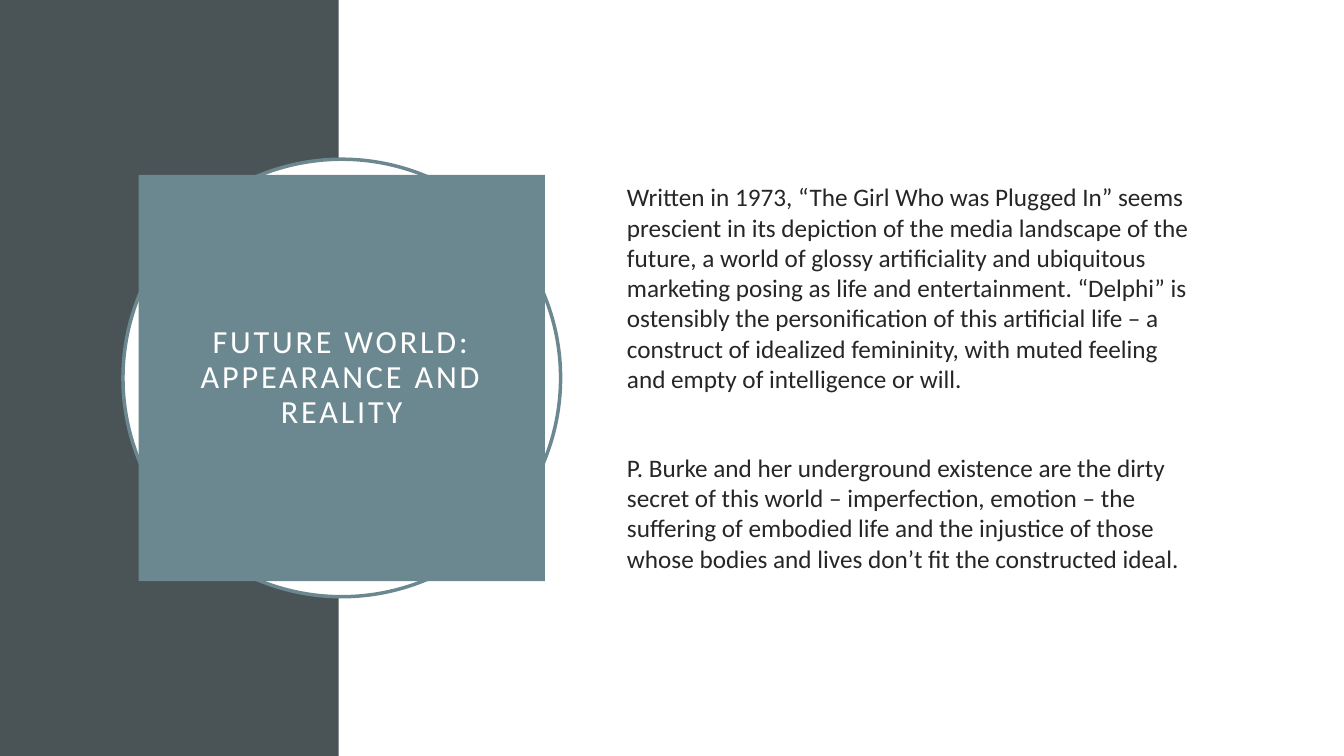
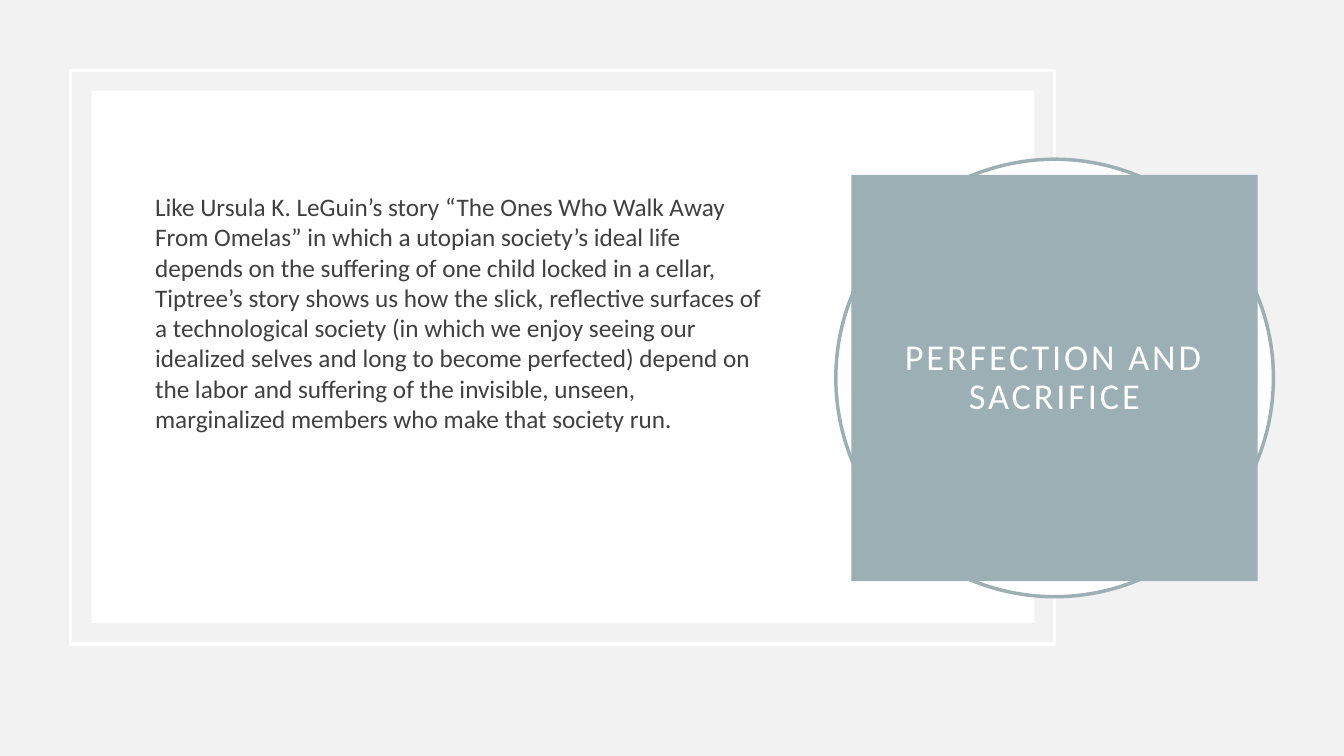
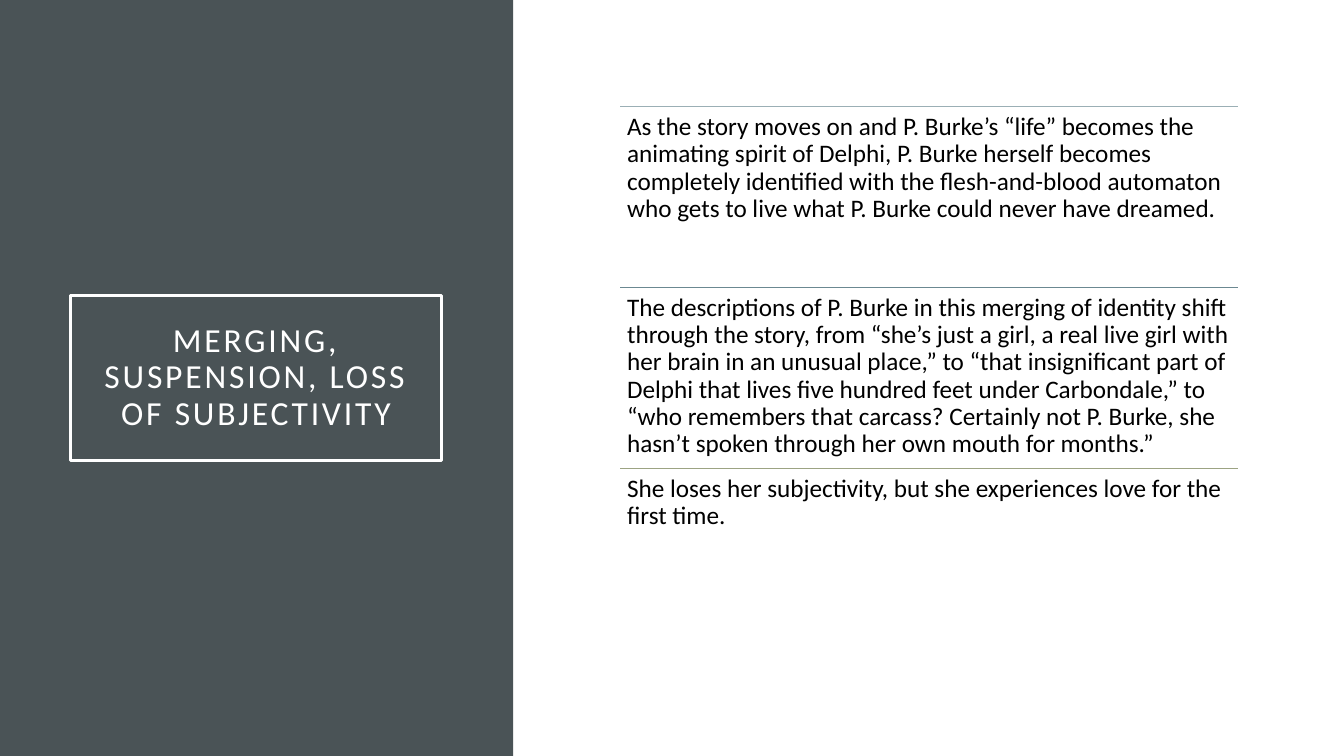
from pptx import Presentation, util as u
from pptx.dml.color import RGBColor
from pptx.enum import shapes, text
from pptx.oxml.ns import qn
from lxml import etree

Inches, Pt = u.Inches, u.Pt
WIDTH, HEIGHT = 13.33, 7.5
FONT = "Calibri"
COLORS = {
    "white": "FFFFFF", "mist": "F2F2F2", "slate": "4A5356",
    "teal": "6B8891", "pale": "9BAFB5", "olive": "9CA383",
    "ink": "262626", "soft": "404040", "black": "000000",
}
TITLE = {"alignment": text.PP_ALIGN.CENTER, "line_spacing": 0.9}
BODY = {"space_before": Pt(10)}
ROW = {"line_spacing": 0.9}
BODY_INSETS = (0.1, 0.05)
TITLE_INSETS = (0.2, 0.2)
ROW_INSETS = (0.07, 0.07)


def rgb(name):
    return RGBColor.from_string(COLORS[name])


def new_page(deck, background):
    page = deck.slides.add_slide(deck.slide_layouts[6])
    page.background.fill.solid()
    page.background.fill.fore_color.rgb = rgb(background)
    return page


def add_block(page, box, fill=None, line=None, kind="RECTANGLE"):
    block = page.shapes.add_shape(getattr(shapes.MSO_SHAPE, kind), *map(Inches, box))
    block.shadow.inherit = False
    if fill:
        block.fill.solid()
        block.fill.fore_color.rgb = rgb(fill)
    else:
        block.fill.background()
    if line:
        block.line.color.rgb = rgb(line)
        block.line.width = Pt(2.5)
    else:
        block.line.fill.background()
    return block


def write(shape, paragraphs, size, color, style, insets, anchor="MIDDLE", spacing=0):
    frame = shape.text_frame
    across, down = map(Inches, insets)
    frame_format = {
        "word_wrap": True, "vertical_anchor": getattr(text.MSO_ANCHOR, anchor),
        "margin_left": across, "margin_right": across,
        "margin_top": down, "margin_bottom": down,
    }
    for name, value in frame_format.items():
        setattr(frame, name, value)
    for index, words in enumerate(paragraphs):
        para = frame.add_paragraph() if index else frame.paragraphs[0]
        for name, value in style.items():
            setattr(para, name, value)
        span = para.add_run()
        span.text = words
        for name, value in {"name": FONT, "size": Pt(size)}.items():
            setattr(span.font, name, value)
        span.font.color.rgb = rgb(color)
        if spacing:
            span._r.get_or_add_rPr().set("spc", str(spacing * 100))
    return frame


def add_text(page, box, paragraphs, **kind):
    return write(page.shapes.add_textbox(*map(Inches, box)), paragraphs, 18, **kind)


def write_title(shape, words, size):
    write(shape, [words], size, "white", TITLE, TITLE_INSETS, spacing=2)


def add_rule(page, left, top, width, color):
    rule = page.shapes.add_connector(
        shapes.MSO_CONNECTOR.STRAIGHT, *map(Inches, (left, top, left + width, top)))
    rule.line.color.rgb = rgb(color)
    rule.line.width = Pt(0.5)
    etree.SubElement(rule._element.spPr, qn("a:effectLst"))


def add_emblem(page, left, top, words, size, color):
    """Square title in front of a ringed disc."""
    ring, square = 4.34, 4.03
    gap = (ring - square) / 2
    add_block(page, (left, top, ring, ring), "white", color, "OVAL")
    label = add_block(page, (left + gap, top + gap, square, square), color)
    write_title(label, words, size)


def add_rows(page, box, rows):
    """Equal rows of text, each under a thin rule."""
    left, top, width, height = box
    step = height / len(rows)
    for index, (color, words) in enumerate(rows):
        row_top = top + index * step
        add_rule(page, left, row_top, width, color)
        add_text(page, (left, row_top, width, step), [words], color="black",
                 style=ROW, insets=ROW_INSETS, anchor="TOP")


def future_world(deck):
    page = new_page(deck, "white")
    add_block(page, (0, 0, 3.36, HEIGHT), "slate")
    add_emblem(page, 1.22, 1.58, "FUTURE WORLD: APPEARANCE AND REALITY", 23, "teal")
    frame = add_text(page, (6.12, 1.53, 5.82, 4.43), [
        "Written in 1973, “The Girl Who was Plugged In” seems prescient in its "
        "depiction of the media landscape of the future, a world of glossy "
        "artificiality and ubiquitous marketing posing as life and entertainment. "
        "“Delphi” is ostensibly the personification of this artificial life – a "
        "construct of idealized femininity, with muted feeling and empty of "
        "intelligence or will.",
        "P. Burke and her underground existence are the dirty secret of this world "
        "– imperfection, emotion – the suffering of embodied life and the injustice "
        "of those whose bodies and lives don’t fit the constructed ideal.",
    ], color="ink", style=BODY, insets=BODY_INSETS)
    frame.paragraphs[1].space_before = Pt(42)


def perfection(deck):
    page = new_page(deck, "mist")
    # Framed panel
    add_block(page, (0.7, 0.7, 9.76, 5.69), line="white")
    add_block(page, (0.91, 0.9, 9.35, 5.28), "white")
    add_text(page, (1.44, 1.4, 6.25, 3.4), [
        "Like Ursula K. LeGuin’s story “The Ones Who Walk Away From Omelas” in which "
        "a utopian society’s ideal life depends on the suffering of one child locked "
        "in a cellar, Tiptree’s story shows us how the slick, reflective surfaces of "
        "a technological society (in which we enjoy seeing our idealized selves and "
        "long to become perfected) depend on the labor and suffering of the "
        "invisible, unseen, marginalized members who make that society run.",
    ], color="soft", style=BODY, insets=BODY_INSETS)
    add_emblem(page, 8.29, 1.58, "PERFECTION AND SACRIFICE", 26, "pale")


def merging(deck):
    page = new_page(deck, "white")
    # Title band
    add_block(page, (0, 0, 5.09, HEIGHT), "slate")
    label = add_block(page, (0.7, 2.93, 3.68, 1.64), line="white")
    write_title(label, "MERGING, SUSPENSION, LOSS OF SUBJECTIVITY", 24)
    add_rows(page, (6.15, 1.06, 6.13, 5.38), [
        ("pale",
         "As the story moves on and P. Burke’s “life” becomes the animating spirit "
         "of Delphi, P. Burke herself becomes completely identified with the "
         "flesh-and-blood automaton who gets to live what P. Burke could never have "
         "dreamed."),
        ("teal",
         "The descriptions of P. Burke in this merging of identity shift through "
         "the story, from “she’s just a girl, a real live girl with her brain in an "
         "unusual place,” to “that insignificant part of Delphi that lives five "
         "hundred feet under Carbondale,” to “who remembers that carcass? Certainly "
         "not P. Burke, she hasn’t spoken through her own mouth for months.”"),
        ("olive",
         "She loses her subjectivity, but she experiences love for the first time."),
    ])


def main():
    deck = Presentation()
    deck.slide_width, deck.slide_height = Inches(WIDTH), Inches(HEIGHT)
    for build in (future_world, perfection, merging):
        build(deck)
    deck.save("out.pptx")


if __name__ == "__main__":
    main()
